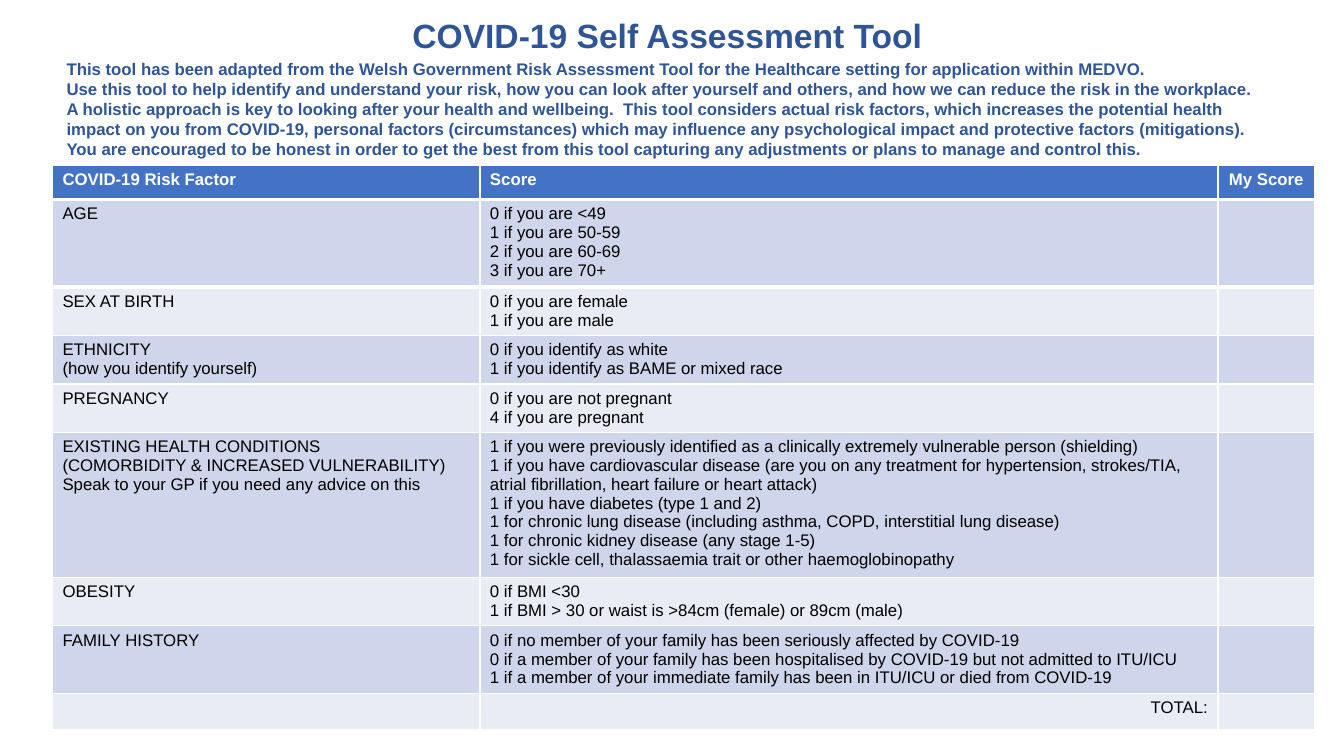
from lxml.etree import SubElement
from pptx import Presentation
from pptx.dml.color import RGBColor
from pptx.enum.text import MSO_ANCHOR, MSO_AUTO_SIZE, PP_ALIGN
from pptx.oxml.ns import qn
from pptx.util import Emu, Pt

PX = 9144
FONT = "Arial"
NAVY = RGBColor(0x2F, 0x55, 0x97)
HEADER_BLUE = RGBColor(0x44, 0x72, 0xC4)
BAND_DARK = RGBColor(0xCF, 0xD5, 0xEA)
BAND_LIGHT = RGBColor(0xE9, 0xEB, 0xF5)
WHITE = RGBColor(0xFF, 0xFF, 0xFF)
BLACK = RGBColor(0x00, 0x00, 0x00)

TITLE = "COVID-19 Self Assessment Tool "
INTRO = [
    "This tool has been adapted from the Welsh Government Risk Assessment Tool for the Healthcare setting for application within MEDVO.",
    "Use this tool to help identify and understand your risk, how you can look after yourself and others, and how we can reduce the risk in the workplace.",
    "A holistic approach is key to looking after your health and wellbeing.  This tool considers actual risk factors, which increases the potential health impact on you from COVID-19, personal factors (circumstances) which may influence any psychological impact and protective factors (mitigations).",
    "You are encouraged to be honest in order to get the best from this tool capturing any adjustments or plans to manage and control this.",
]
COLUMN_WIDTHS = [424, 732, 96]
RISK_ROWS = [
    (34, ["COVID-19 Risk Factor"], ["Score"], ["My Score"]),
    (87, ["AGE"], ["0 if you are <49", "1 if you are 50-59", "2 if you are 60-69", "3 if you are 70+"], []),
    (48, ["SEX AT BIRTH"], ["0 if you are female", "1 if you are male"], []),
    (48, ["ETHNICITY", "(how you identify yourself)"],
     ["0 if you identify as white", "1 if you identify as BAME or mixed race"], []),
    (48, ["PREGNANCY"], ["0 if you are not pregnant", "4 if you are pregnant"], []),
    (144, ["EXISTING HEALTH CONDITIONS", "(COMORBIDITY & INCREASED VULNERABILITY)",
           "Speak to your GP if you need any advice on this"],
     ["1 if you were previously identified as a clinically extremely vulnerable person (shielding)",
      "1 if you have cardiovascular disease (are you on any treatment for hypertension, strokes/TIA, atrial fibrillation, heart failure or heart attack)",
      "1 if you have diabetes (type 1 and 2)",
      "1 for chronic lung disease (including asthma, COPD, interstitial lung disease)",
      "1 for chronic kidney disease (any stage 1-5)",
      "1 for sickle cell, thalassaemia trait or other haemoglobinopathy"], []),
    (48, ["OBESITY"], ["0 if BMI <30", "1 if BMI > 30 or waist is >84cm (female) or 89cm (male)"], []),
    (67, ["FAMILY HISTORY"],
     ["0 if no member of your family has been seriously affected by COVID-19",
      "0 if a member of your family has been hospitalised by COVID-19 but not admitted to ITU/ICU",
      "1 if a member of your immediate family has been in ITU/ICU or died from COVID-19"], []),
    (36, [], ["TOTAL:"], []),
]


def to_emu(box):
    """Turn a box in px into EMU lengths."""
    return [Emu(length * PX) for length in box]


def write_lines(frame, lines, size, color, bold, align=PP_ALIGN.LEFT):
    """Write one paragraph per line and return the paragraphs."""
    paras = [frame.paragraphs[0]] + [frame.add_paragraph() for _ in lines[1:]]
    for para, line in zip(paras, lines):
        para.alignment = align
        span = para.add_run()
        span.text = line
        span.font.name = FONT
        span.font.size = Pt(size)
        span.font.bold = bold
        span.font.color.rgb = color
    return paras


def place_text(holder, box, anchor):
    """Move a placeholder to the box and return its text frame."""
    holder.left, holder.top, holder.width, holder.height = to_emu(box)
    frame = holder.text_frame
    frame.word_wrap = True
    frame.auto_size = MSO_AUTO_SIZE.NONE
    frame.vertical_anchor = anchor
    return frame


def add_title(page, box):
    """Fill the title placeholder."""
    frame = place_text(page.shapes.title, box, MSO_ANCHOR.MIDDLE)
    write_lines(frame, [TITLE], 24, NAVY, True, PP_ALIGN.CENTER)


def add_intro(page, box):
    """Fill the body placeholder with unbulleted paragraphs."""
    frame = place_text(page.placeholders[1], box, MSO_ANCHOR.TOP)
    for para in write_lines(frame, INTRO, 12, NAVY, True):
        para.space_before = Pt(0)
        properties = para._p.get_or_add_pPr()
        properties.set("marL", "0")
        properties.set("indent", "0")
        SubElement(properties, qn("a:buNone"))


def cell_align(lines):
    """Choose the alignment of a cell from its heading."""
    return {"My Score": PP_ALIGN.CENTER, "TOTAL:": PP_ALIGN.RIGHT}.get("".join(lines), PP_ALIGN.LEFT)


def add_border(cell, side, points):
    """Draw a white border on one side of a cell."""
    properties = cell._tc.get_or_add_tcPr()
    line = SubElement(properties, qn(side), w=str(Pt(points)))
    SubElement(SubElement(line, qn("a:solidFill")), qn("a:srgbClr"), val=str(WHITE))
    properties.insert(0, line)


def fill_cell(cell, lines, fill, color, bold):
    """Colour a cell and write its lines."""
    cell.fill.solid()
    cell.fill.fore_color.rgb = fill
    if lines:
        write_lines(cell.text_frame, lines, 12, color, bold, cell_align(lines))
    else:
        SubElement(cell.text_frame.paragraphs[0]._p, qn("a:endParaRPr")).set("sz", "1200")


def add_risk_table(page, box):
    """Draw the banded table of risk factors and scores."""
    table = page.shapes.add_table(len(RISK_ROWS), len(COLUMN_WIDTHS), *to_emu(box)).table
    for column, width in zip(table.columns, COLUMN_WIDTHS):
        column.width = Emu(width * PX)
    for index, (height, *texts) in enumerate(RISK_ROWS):
        row = table.rows[index]
        row.height = Emu(height * PX)
        header = index == 0
        fill = HEADER_BLUE if header else BAND_DARK if index % 2 else BAND_LIGHT
        for cell, lines in zip(row.cells, texts):
            fill_cell(cell, lines, fill, WHITE if header else BLACK, header)
    for upper, lower in zip(table.rows[0].cells, table.rows[1].cells):
        add_border(upper, "a:lnB", 3)
        add_border(lower, "a:lnT", 3)


def main():
    """Build the self assessment page."""
    deck = Presentation()
    deck.slide_width, deck.slide_height = to_emu((1333, 750))
    page = deck.slides.add_slide(deck.slide_layouts[1])
    add_risk_table(page, (52, 164, sum(COLUMN_WIDTHS), sum(row[0] for row in RISK_ROWS)))
    add_title(page, (72, 10, 1189, 50))
    add_intro(page, (56, 53, 1222, 111))
    deck.save("out.pptx")


if __name__ == "__main__":
    main()
